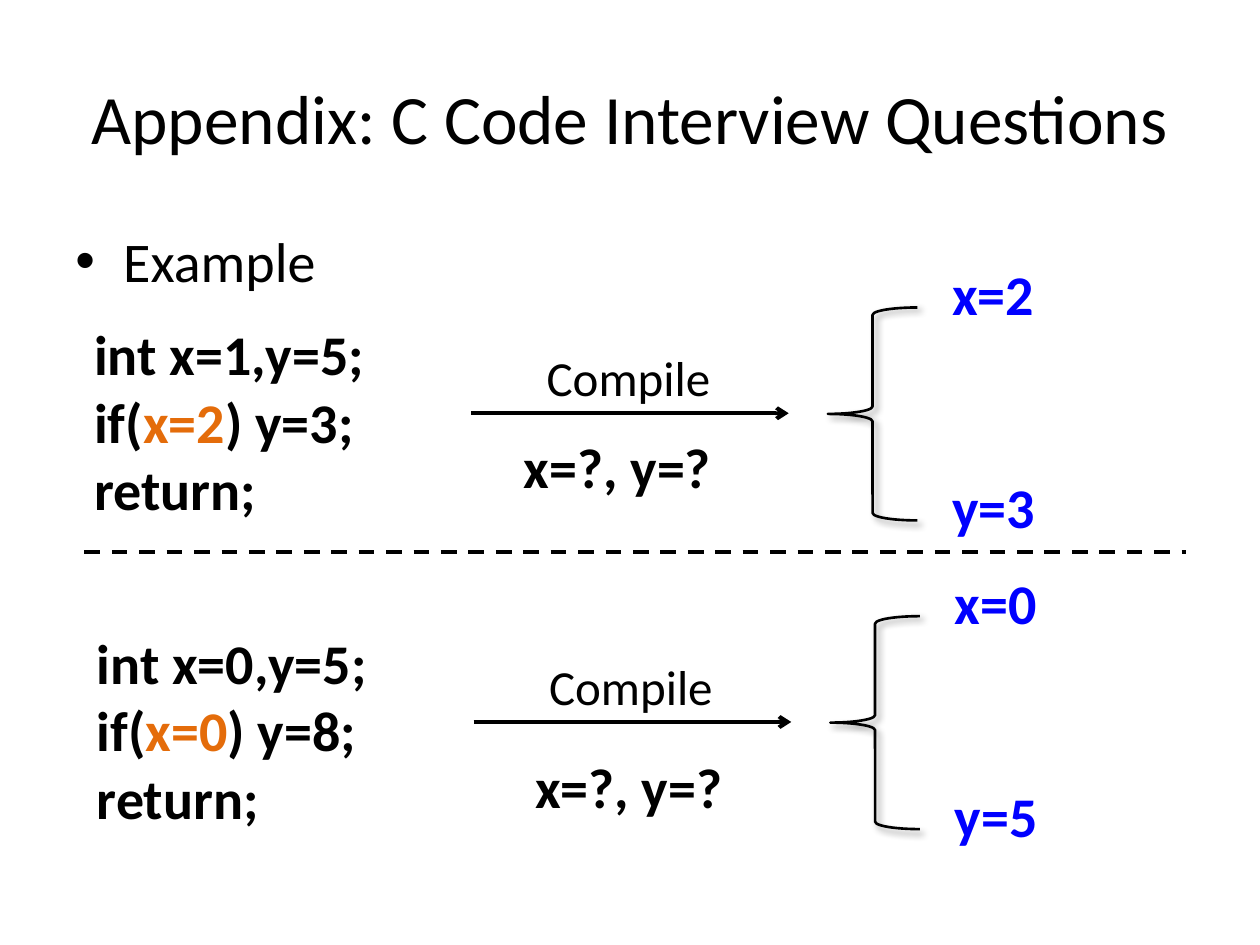
from dataclasses import dataclass

from lxml import etree
from pptx import Presentation
from pptx.dml.color import RGBColor
from pptx.enum.dml import MSO_LINE
from pptx.enum.shapes import MSO_CONNECTOR, MSO_SHAPE
from pptx.enum.text import MSO_ANCHOR, MSO_AUTO_SIZE, PP_ALIGN
from pptx.oxml.ns import qn
from pptx.util import Inches, Pt

STRAIGHT = MSO_CONNECTOR.STRAIGHT
BRACE = MSO_SHAPE.LEFT_BRACE
DASH = MSO_LINE.DASH
MIDDLE, TOP = MSO_ANCHOR.MIDDLE, MSO_ANCHOR.TOP
LEFT, CENTER = PP_ALIGN.LEFT, PP_ALIGN.CENTER
GROW, FIXED = MSO_AUTO_SIZE.SHAPE_TO_FIT_TEXT, MSO_AUTO_SIZE.NONE


@dataclass(frozen=True)
class Theme:
    font: str = "Calibri"
    black: str = "000000"
    orange: str = "E46C0A"
    blue: str = "0000FF"
    title: float = 39.6
    body: float = 32
    label: float = 28
    rule: float = 2.25
    edge: float = 1.5


class Painter:
    def __init__(self, slide, theme):
        self.shapes = slide.shapes
        self.theme = theme

    def text(self, box, lines, size, color=None, bold=False, wrap=False,
             fit=GROW, align=LEFT, anchor=TOP):
        """Each line is a string, or a list of (text, color) runs."""
        color = color or self.theme.black
        frame = self.shapes.add_textbox(*map(Inches, box)).text_frame
        frame.word_wrap, frame.auto_size = wrap, fit
        frame.vertical_anchor = anchor
        for i, line in enumerate(lines):
            para = frame.add_paragraph() if i else frame.paragraphs[0]
            para.alignment = align
            para.font.name, para.font.size = self.theme.font, Pt(size)
            para.font.bold = bold
            runs = [(line, color)] if isinstance(line, str) else line
            for words, tint in runs:
                run = para.add_run()
                run.text = words
                run.font.color.rgb = RGBColor.from_string(tint)
        return frame

    def bullet(self, box, words):
        size = self.theme.body
        para = self.text(box, [words], size, wrap=True, fit=FIXED).paragraphs[0]
        para.space_before = Pt(0.2 * size)
        props = para._p.get_or_add_pPr()
        indent = Inches(0.38)
        props.set("marL", str(indent))
        props.set("indent", str(-indent))
        etree.SubElement(props, qn("a:buFont"), typeface="Arial")
        etree.SubElement(props, qn("a:buChar"), char="•")

    def line(self, left, right, y, dash=None, arrow=False):
        link = self.shapes.add_connector(
            STRAIGHT, Inches(left), Inches(y), Inches(right), Inches(y))
        link.line.color.rgb = RGBColor.from_string(self.theme.black)
        link.line.width = Pt(self.theme.rule)
        if dash:
            link.line.dash_style = dash
        if arrow:
            etree.SubElement(link.line._get_or_add_ln(), qn("a:tailEnd"), type="arrow")
        etree.SubElement(link._element.spPr, qn("a:effectLst"))

    def brace(self, box):
        shape = self.shapes.add_shape(BRACE, *map(Inches, box))
        shape.fill.background()
        shape.line.color.rgb = RGBColor.from_string(self.theme.black)
        shape.line.width = Pt(self.theme.edge)
        # Soft shadow: 40% black, down to the right
        shape.shadow.inherit = False
        effects = shape._element.spPr.find(qn("a:effectLst"))
        outer = etree.SubElement(
            effects, qn("a:outerShdw"), blurRad=str(Pt(4)), dist=str(Pt(3)),
            dir=str(45 * 60000), algn="tl", rotWithShape="0")
        tint = etree.SubElement(outer, qn("a:srgbClr"), val=self.theme.black)
        etree.SubElement(tint, qn("a:alpha"), val="40000")

    def example(self, x, y, start, test, then, ask, answers):
        """Code, compile arrow, question and braced answers; x, y is the code corner."""
        look = self.theme
        code = [start,
                [("if(", look.black), (test, look.orange), (f") {then}", look.black)],
                "return;"]
        self.text((x, y, 2.76, 1.72), code, look.body, bold=True, wrap=True)
        self.line(x + 3.09, x + 5.61, y + 0.79, arrow=True)
        self.text((x + 3.59, y + 0.22, 1.51, 0.57), ["Compile"], look.label)
        self.text((*ask, 1.7, 0.64), ["x=?, y=?"], look.body, bold=True)
        self.brace((x + 5.92, y - 0.05, 0.71, 1.69))
        for i, answer in enumerate(answers):
            self.text((x + 6.81, y - 0.48 + 1.69 * i, 0.87, 0.64), [answer],
                      look.body, look.blue, bold=True)


def main():
    deck = Presentation()
    deck.slide_width, deck.slide_height = Inches(10), Inches(7.5)
    theme = Theme()
    paint = Painter(deck.slides.add_slide(deck.slide_layouts[6]), theme)

    # Heading
    paint.text((0.5, 0.3, 9, 1.25), ["Appendix: C Code Interview Questions"],
               theme.title, wrap=True, fit=FIXED, align=CENTER, anchor=MIDDLE)
    paint.bullet((0.5, 1.75, 9, 4.95), "Example")

    # Two examples, split by a dashed rule
    paint.example(0.65, 2.49, "int x=1,y=5;", "x=2", "y=3;", (4.06, 3.38), ("x=2", "y=3"))
    paint.line(0.67, 9.41, 4.38, dash=DASH)
    paint.example(0.67, 4.94, "int x=0,y=5;", "x=0", "y=8;", (4.15, 5.92), ("x=0", "y=5"))

    deck.save("out.pptx")


if __name__ == "__main__":
    main()
